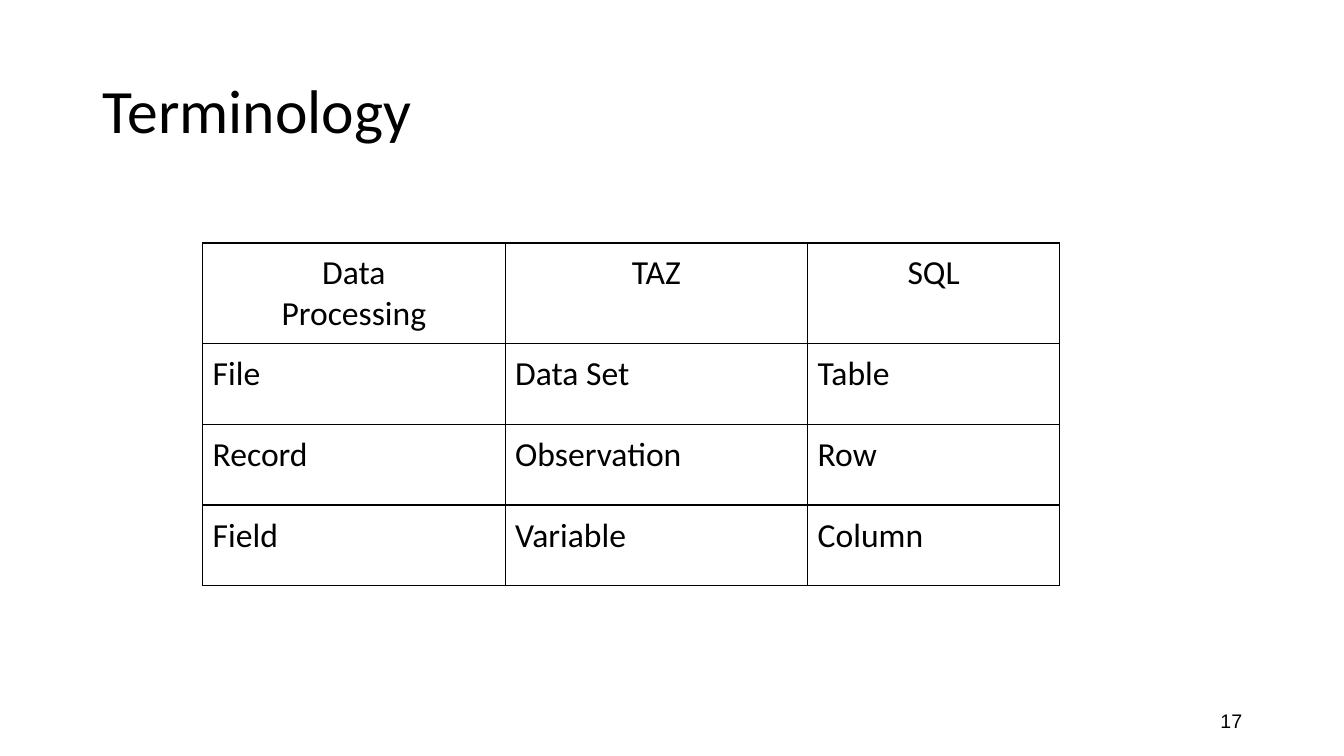
from dataclasses import dataclass

from lxml import etree
from pptx import Presentation
from pptx.dml import color
from pptx.enum import text
from pptx.oxml import ns
from pptx.util import Inches, Pt


# Colours, fonts and type sizes
@dataclass(frozen=True)
class Theme:
    ink: str = "000000"
    paper: str = "FFFFFF"
    body_font: str = "Calibri"
    number_font: str = "Arial"
    title_size: int = 44
    table_size: int = 24
    number_size: int = 14
    border_width: int = 1


@dataclass(frozen=True)
class Area:
    left: float
    top: float
    width: float
    height: float

    def lengths(self):
        return [Inches(n) for n in (self.left, self.top, self.width, self.height)]


@dataclass(frozen=True)
class Term:
    data_processing: str
    statistics: str
    sql: str

    def words(self) -> list[str]:
        return [self.data_processing, self.statistics, self.sql]


# Layout and content
THEME = Theme()
TITLE_AREA = Area(0.92, 0.4, 11.5, 1.45)
NUMBER_AREA = Area(9.42, 6.95, 3, 0.4)
TABLE_AREA = Area(2.01, 2.41, 8.5, 3.39)
COLUMN_WIDTHS = [3, 3, 2.5]
ROW_HEIGHTS = [0.99, 0.8, 0.8, 0.8]
CELL_MARGIN = 0.1
TERMS = [
    Term("Data\nProcessing", "TAZ", "SQL"),
    Term("File", "Data Set", "Table"),
    Term("Record", "Observation", "Row"),
    Term("Field", "Variable", "Column"),
]


def write(frame, words: str, font: str, size: int, align) -> None:
    """Fill a text frame with one formatted paragraph."""
    para = frame.paragraphs[0]
    para.text = words
    para.alignment = align
    for span in para.runs:
        for name, value in {"name": font, "size": Pt(size)}.items():
            setattr(span.font, name, value)
        span.font.color.rgb = color.RGBColor.from_string(THEME.ink)


def add_borders(cell) -> None:
    """Draw a thin line on all four sides of a cell."""
    properties = cell._tc.get_or_add_tcPr()
    for index, side in enumerate(("lnL", "lnR", "lnT", "lnB")):
        line = etree.Element(ns.qn(f"a:{side}"), w=str(Pt(THEME.border_width)))
        fill = etree.SubElement(line, ns.qn("a:solidFill"))
        etree.SubElement(fill, ns.qn("a:srgbClr"), val=THEME.ink)
        properties.insert(index, line)


def add_title(page, words: str) -> None:
    title = page.shapes.title
    title.left, title.top, title.width, title.height = TITLE_AREA.lengths()
    title.text_frame.vertical_anchor = text.MSO_ANCHOR.MIDDLE
    write(title.text_frame, words, THEME.body_font, THEME.title_size, text.PP_ALIGN.LEFT)
    title.text_frame.paragraphs[0].line_spacing = 0.9


def add_page_number(page, number: int) -> None:
    frame = page.shapes.add_textbox(*NUMBER_AREA.lengths()).text_frame
    frame.word_wrap = True
    frame.vertical_anchor = text.MSO_ANCHOR.MIDDLE
    write(frame, str(number), THEME.number_font, THEME.number_size, text.PP_ALIGN.RIGHT)


def add_term_table(page, terms: list[Term]) -> None:
    table = page.shapes.add_table(
        len(terms), len(COLUMN_WIDTHS), *TABLE_AREA.lengths()
    ).table
    for name, value in {"first_row": False, "horz_banding": False}.items():
        setattr(table, name, value)
    for column, width in zip(table.columns, COLUMN_WIDTHS):
        column.width = Inches(width)
    for row, height in zip(table.rows, ROW_HEIGHTS):
        row.height = Inches(height)

    # Cells: centred headings, then left-aligned terms
    for row_index, term in enumerate(terms):
        align = text.PP_ALIGN.LEFT if row_index else text.PP_ALIGN.CENTER
        for column_index, words in enumerate(term.words()):
            cell = table.cell(row_index, column_index)
            for side in ("left", "top", "right", "bottom"):
                setattr(cell, f"margin_{side}", Inches(CELL_MARGIN))
            cell.fill.background()
            write(cell.text_frame, words, THEME.body_font, THEME.table_size, align)
            add_borders(cell)


def main() -> None:
    # Page
    deck = Presentation()
    deck.slide_width, deck.slide_height = Inches(13.33), Inches(7.5)
    page = deck.slides.add_slide(deck.slide_layouts.get_by_name("Title Only"))
    page.background.fill.solid()
    page.background.fill.fore_color.rgb = color.RGBColor.from_string(THEME.paper)

    # Contents
    add_title(page, "Terminology")
    add_page_number(page, 17)
    add_term_table(page, TERMS)
    deck.save("out.pptx")


if __name__ == "__main__":
    main()
